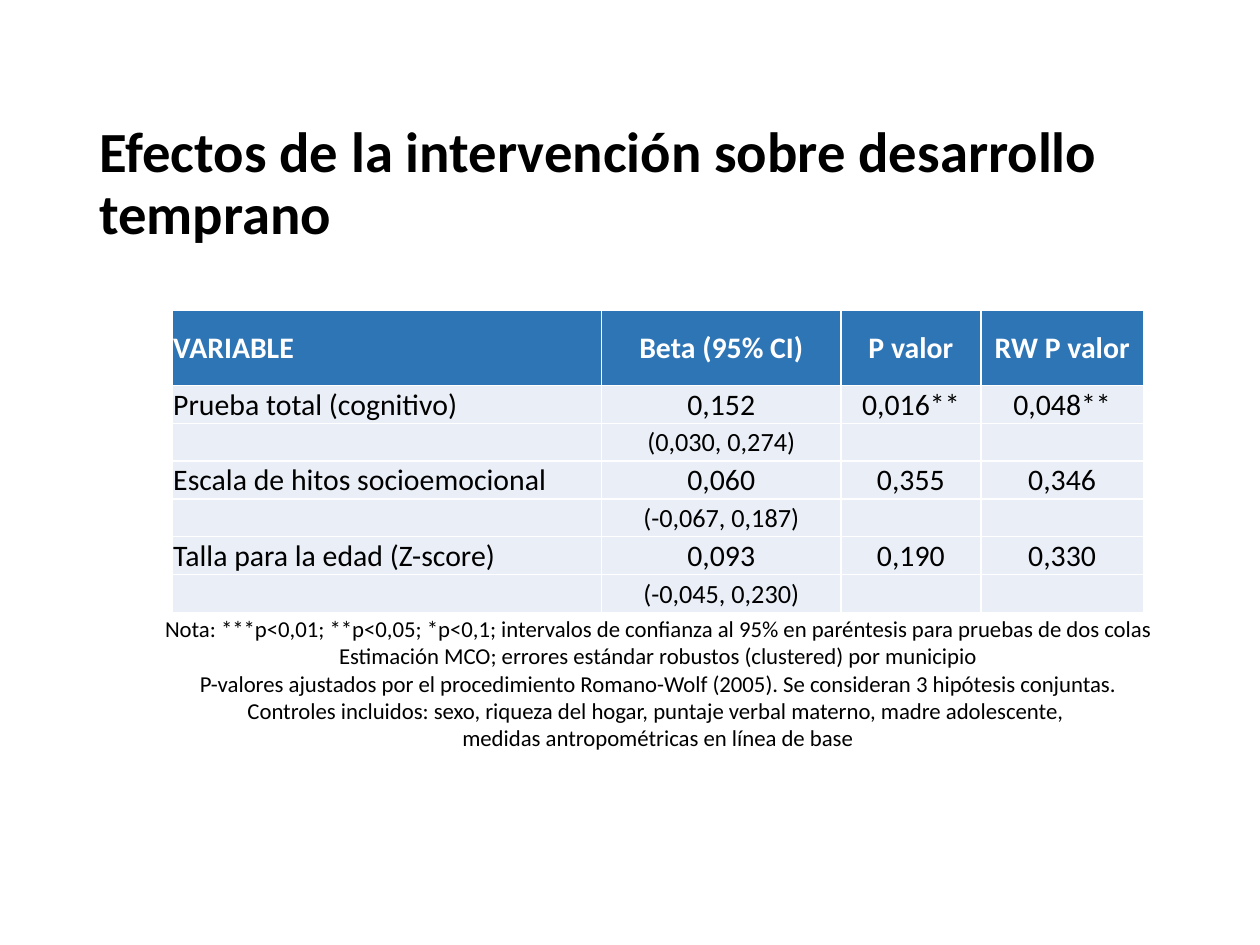
from lxml.etree import SubElement
from pptx import Presentation
from pptx.dml.color import RGBColor
from pptx.enum.text import MSO_ANCHOR, MSO_AUTO_SIZE, PP_ALIGN
from pptx.oxml.ns import qn
from pptx.util import Inches, Pt

WIDTH, HEIGHT = Inches(10), Inches(7.5)
FONT = "Calibri"
BLACK = RGBColor(0x00, 0x00, 0x00)
WHITE = RGBColor(0xFF, 0xFF, 0xFF)
HEADER_BLUE = RGBColor(0x2E, 0x75, 0xB6)
ROW_BLUE = RGBColor(0xEA, 0xEF, 0xF7)

TITLE = "Efectos de la intervención sobre desarrollo temprano"
HEADINGS = ("VARIABLE", "Beta (95% CI)", "P valor", "RW P valor")
RESULTS = (
    ("Prueba total (cognitivo)", "0,152", "(0,030, 0,274)", "0,016**", "0,048**"),
    ("Escala de hitos socioemocional", "0,060", "(-0,067, 0,187)", "0,355", "0,346"),
    ("Talla para la edad (Z-score)", "0,093", "(-0,045, 0,230)", "0,190", "0,330"),
)
NOTES = (
    "Nota: ***p<0,01; **p<0,05; *p<0,1; intervalos de confianza al 95% en paréntesis para pruebas de dos colas",
    "Estimación MCO; errores estándar robustos (clustered) por municipio",
    "P-valores ajustados por el procedimiento Romano-Wolf (2005). Se consideran 3 hipótesis conjuntas.",
    "Controles incluidos: sexo, riqueza del hogar, puntaje verbal materno, madre adolescente, ",
    "medidas antropométricas en línea de base",
)
COLUMN_WIDTHS = (3.41, 1.9, 1.11, 1.29)
HEADER_HEIGHT, ROW_HEIGHT = 0.6, 0.3


def place(left, top, width, height):
    return (round(left * WIDTH / 100), round(top * HEIGHT / 100),
            round(width * WIDTH / 100), round(height * HEIGHT / 100))


def add_run(paragraph, text, size, color=BLACK, bold=False):
    run = paragraph.add_run()
    run.text = text
    run.font.name = FONT
    run.font.size = Pt(size)
    run.font.bold = bold
    run.font.color.rgb = color


def add_title(slide):
    title = slide.shapes.add_textbox(*place(6.9, 14.55, 86.2, 10.1))
    frame = title.text_frame
    frame.word_wrap = True
    frame.vertical_anchor = MSO_ANCHOR.MIDDLE
    paragraph = frame.paragraphs[0]
    paragraph.line_spacing = 0.9
    add_run(paragraph, TITLE, 32.4, bold=True)


def add_borders(cell):
    properties = cell._tc.get_or_add_tcPr()
    for side in ("a:lnL", "a:lnR", "a:lnT", "a:lnB"):
        border = SubElement(properties, qn(side), w=str(Pt(1)))
        fill = SubElement(border, qn("a:solidFill"))
        SubElement(fill, qn("a:srgbClr"), val=str(WHITE))


def fill_cell(cell, text, column, fill, size, color, bold):
    cell.margin_left = cell.margin_right = cell.margin_top = Inches(0.01)
    cell.margin_bottom = 0
    cell.vertical_anchor = MSO_ANCHOR.MIDDLE
    add_borders(cell)
    cell.fill.solid()
    cell.fill.fore_color.rgb = fill
    paragraph = cell.text_frame.paragraphs[0]
    paragraph.alignment = PP_ALIGN.CENTER if column else PP_ALIGN.LEFT
    if text:
        add_run(paragraph, text, size, color, bold)
    else:
        SubElement(paragraph._p, qn("a:endParaRPr"), sz=str(size * 100))


def add_results_table(slide):
    rows = [(HEADINGS, HEADER_BLUE, 17, WHITE, True)]
    for variable, beta, interval, p_value, rw_p_value in RESULTS:
        rows.append(((variable, beta, p_value, rw_p_value), ROW_BLUE, 17, BLACK, False))
        rows.append((("", interval, "", ""), ROW_BLUE, 15, BLACK, False))
    frame = slide.shapes.add_table(len(rows), len(HEADINGS),
                                   *place(13.65, 32.8, 77.1, 32))
    table = frame.table
    table.horz_banding = False
    for column, width in zip(table.columns, COLUMN_WIDTHS):
        column.width = Inches(width)
    for index, (texts, *style) in enumerate(rows):
        table.rows[index].height = Inches(ROW_HEIGHT if index else HEADER_HEIGHT)
        for column, text in enumerate(texts):
            fill_cell(table.cell(index, column), text, column, *style)


def add_notes(slide):
    notes = slide.shapes.add_textbox(*place(6.23, 64.4, 91.9, 15.9))
    frame = notes.text_frame
    frame.word_wrap = True
    frame.auto_size = MSO_AUTO_SIZE.SHAPE_TO_FIT_TEXT
    for index, note in enumerate(NOTES):
        paragraph = frame.add_paragraph() if index else frame.paragraphs[0]
        paragraph.alignment = PP_ALIGN.CENTER
        add_run(paragraph, note, 13)


def main():
    presentation = Presentation()
    presentation.slide_width, presentation.slide_height = WIDTH, HEIGHT
    slide = presentation.slides.add_slide(presentation.slide_layouts[6])
    add_title(slide)
    add_results_table(slide)
    add_notes(slide)
    presentation.save("out.pptx")


if __name__ == "__main__":
    main()
